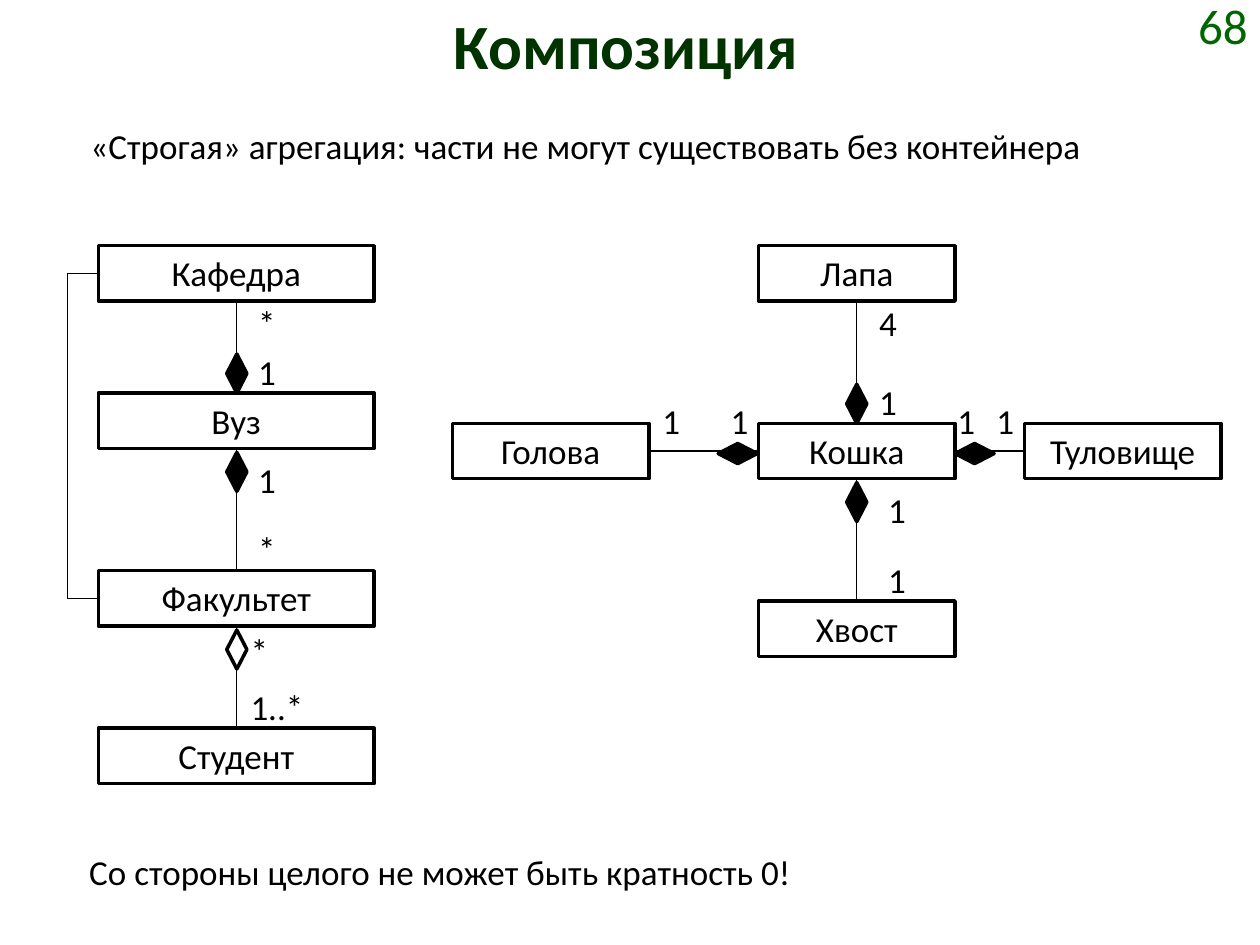
"""Builds a slide on UML composition with two class diagrams."""
from pptx import Presentation
from pptx.dml.color import RGBColor
from pptx.enum.shapes import MSO_CONNECTOR as CONN, MSO_SHAPE as SHAPE
from pptx.enum.text import MSO_ANCHOR as ANCHOR, PP_ALIGN as ALIGN
from pptx.oxml.ns import qn
from pptx.util import Inches, Pt
from lxml import etree

COLORS = {"ink": "000000", "paper": "FFFFFF", "title": "003300", "number": "006600"}
FONT = "Calibri"
BOX_H = 0.44
TOP, LEFT, BOTTOM, RIGHT = range(4)

# name: left, top, width
CLASSES = {
    "Кафедра": (0.78, 1.95, 2.19),
    "Вуз": (0.78, 3.12, 2.19),
    "Факультет": (0.78, 4.53, 2.19),
    "Студент": (0.78, 5.78, 2.19),
    "Лапа": (6.02, 1.95, 1.56),
    "Голова": (3.59, 3.36, 1.56),
    "Кошка": (6.02, 3.36, 1.56),
    "Туловище": (8.13, 3.36, 1.56),
    "Хвост": (6.02, 4.77, 1.56),
}
# part, its side, whole, its side
LINKS = [
    ("Кафедра", BOTTOM, "Вуз", TOP),
    ("Факультет", TOP, "Вуз", BOTTOM),
    ("Студент", TOP, "Факультет", BOTTOM),
    ("Лапа", BOTTOM, "Кошка", TOP),
    ("Хвост", TOP, "Кошка", BOTTOM),
    ("Голова", RIGHT, "Кошка", LEFT),
    ("Туловище", LEFT, "Кошка", RIGHT),
]
# left, top, width, height, fill
DIAMONDS = [
    (1.8, 2.81, 0.16, 0.31, "ink"),
    (1.8, 3.59, 0.16, 0.31, "ink"),
    (1.8, 5, 0.16, 0.31, "paper"),
    (6.72, 3.05, 0.16, 0.31, "ink"),
    (6.72, 3.83, 0.16, 0.31, "ink"),
    (5.7, 3.52, 0.31, 0.16, "ink"),
    (7.58, 3.52, 0.31, 0.16, "ink"),
]
# text, left, top, width
LABELS = [
    ("*", 1.95, 2.34, 0.34),
    ("1", 1.95, 2.73, 0.34),
    ("1", 1.95, 3.59, 0.34),
    ("*", 1.95, 4.14, 0.34),
    ("*", 1.89, 4.95, 0.34),
    ("1..*", 1.89, 5.39, 0.76),
    ("4", 6.88, 2.34, 0.34),
    ("1", 6.88, 2.97, 0.34),
    ("1", 6.95, 3.83, 0.34),
    ("1", 6.95, 4.38, 0.34),
    ("1", 5.16, 3.12, 0.34),
    ("1", 5.7, 3.12, 0.34),
    ("1", 7.5, 3.12, 0.34),
    ("1", 7.81, 3.12, 0.34),
    ("«Строгая» агрегация: части не могут существовать без контейнера", 0.62, 0.94, 8.67),
    ("Со стороны целого не может быть кратность 0!", 0.61, 6.7, 8.67),
]


def rgb(name):
    return RGBColor.from_string(COLORS[name])


def set_text(sp, text, size=20, color="ink", align=ALIGN.JUSTIFY, anchor=ANCHOR.TOP, bold=False):
    tf = sp.text_frame
    tf.word_wrap = True
    tf.vertical_anchor = anchor
    tf.text = text
    p = tf.paragraphs[0]
    p.alignment = align
    font = p.runs[0].font
    font.name, font.size, font.bold = FONT, Pt(size), bold
    font.color.rgb = rgb(color)


def add_text(slide, text, left, top, width, height=BOX_H, **style):
    box = slide.shapes.add_textbox(Inches(left), Inches(top), Inches(width), Inches(height))
    set_text(box, text, **style)


def add_outlined(slide, kind, left, top, width, height, fill):
    sp = slide.shapes.add_shape(kind, Inches(left), Inches(top), Inches(width), Inches(height))
    sp.shadow.inherit = False
    sp.fill.solid()
    sp.fill.fore_color.rgb = rgb(fill)
    sp.line.color.rgb = rgb("ink")
    sp.line.width = Pt(2)
    return sp


def add_class(slide, name, left, top, width):
    sp = add_outlined(slide, SHAPE.RECTANGLE, left, top, width, BOX_H, "paper")
    set_text(sp, name, align=ALIGN.CENTER)
    return sp


def add_line(slide, kind, x1=0, y1=0, x2=0, y2=0):
    line = slide.shapes.add_connector(kind, Inches(x1), Inches(y1), Inches(x2), Inches(y2))
    line.line.color.rgb = rgb("ink")
    line.line.width = Pt(0.75)
    etree.SubElement(line._element.spPr, qn("a:effectLst"))
    return line


def add_link(slide, part, part_side, whole, whole_side):
    line = add_line(slide, CONN.STRAIGHT)
    line.begin_connect(part, part_side)
    line.end_connect(whole, whole_side)


def add_bracket(slide, x, y1, y2, reach):
    """Draws an elbow that leaves x to the left by reach and comes back."""
    step = 0.01
    line = add_line(slide, CONN.ELBOW, x + step, y1, x, y2)
    guides = line._element.spPr.find(qn("a:prstGeom")).get_or_add_avLst()
    bend = round((reach + step) / step * 100000)
    etree.SubElement(guides, qn("a:gd"), name="adj1", fmla=f"val {bend}")


def main():
    prs = Presentation()
    prs.slide_width, prs.slide_height = Inches(10), Inches(7.5)
    slide = prs.slides.add_slide(prs.slide_layouts[6])

    add_text(slide, "Композиция", 0.47, 0, 9, 0.94,
             size=36, color="title", align=ALIGN.CENTER, bold=True)
    add_text(slide, "68", 8.98, 0, 1.02, 0.39,
             size=28, color="number", align=ALIGN.RIGHT, anchor=ANCHOR.MIDDLE)

    boxes = {name: add_class(slide, name, *place) for name, place in CLASSES.items()}
    for part, part_side, whole, whole_side in LINKS:
        add_link(slide, boxes[part], part_side, boxes[whole], whole_side)
    add_bracket(slide, 0.78, 2.17, 4.75, 0.25)
    for diamond in DIAMONDS:
        add_outlined(slide, SHAPE.FLOWCHART_DECISION, *diamond)
    for label in LABELS:
        add_text(slide, *label)

    prs.save("out.pptx")


if __name__ == "__main__":
    main()
